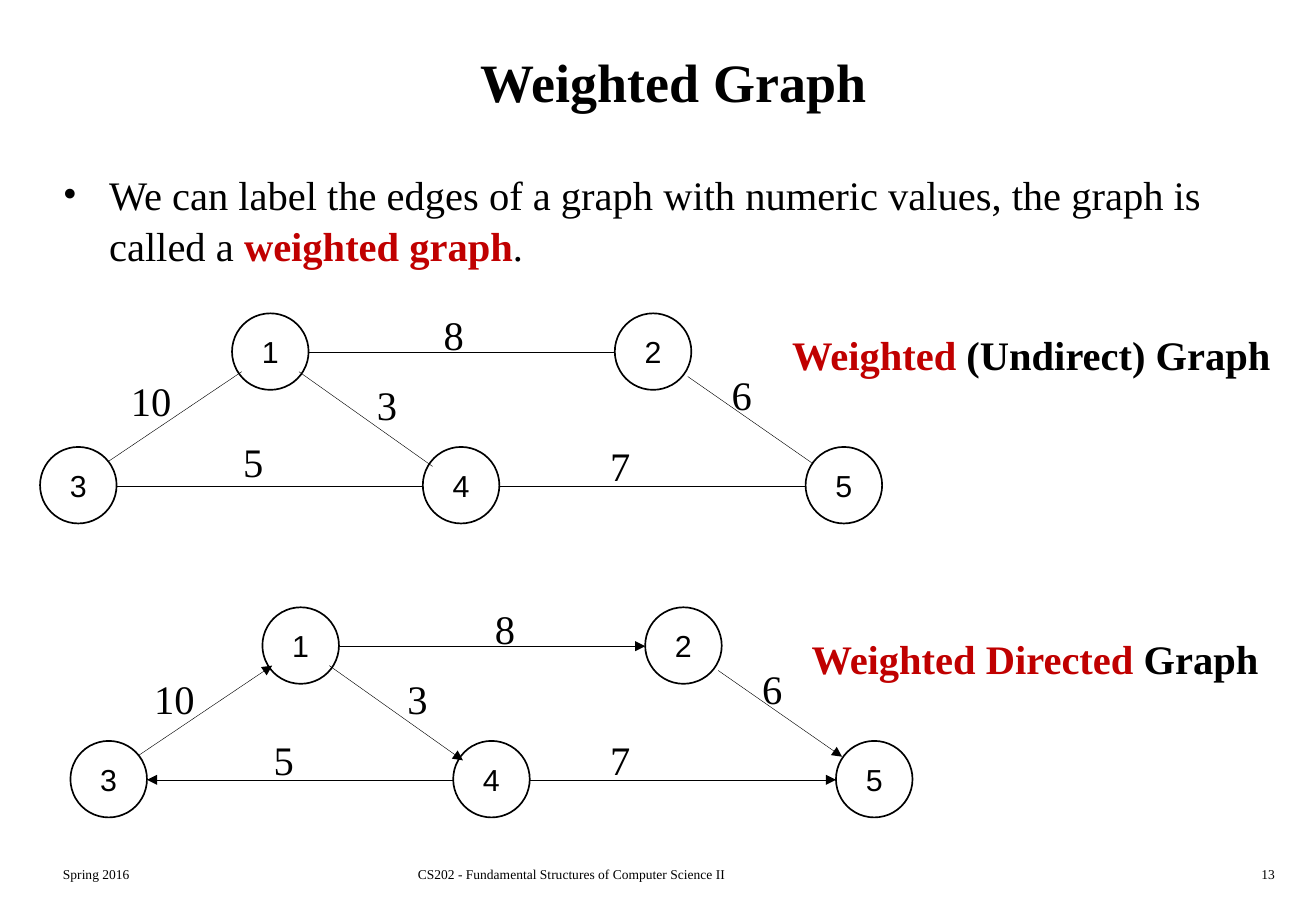
import lxml.etree
import pptx
import pptx.util
import pptx.dml.color
import pptx.enum.shapes
import pptx.enum.text
import pptx.oxml.ns

Inches = pptx.util.Inches
ALIGN = pptx.enum.text.PP_ALIGN
ANCHOR = pptx.enum.text.MSO_ANCHOR
BLACK = "000000"
RED = "C00000"
SERIF = "Times New Roman"
SIZE = 0.63
NODES = {"1": (1.58, 0), "4": (3.15, 1.1), "2": (4.73, 0),
         "5": (6.3, 1.1), "3": (0, 1.1)}
EDGES = [
    (2.13, 0.48, 3.23, 1.26),
    (2.21, 0.32, 4.73, 0.32),
    (5.33, 0.52, 6.35, 1.23),
    (3.15, 1.42, 0.63, 1.42),
    (3.78, 1.42, 6.3, 1.42),
    (0.56, 1.22, 1.66, 0.48),
]


def color(code):
    return pptx.dml.color.RGBColor.from_string(code)


def child(parent, tag, **attrs):
    lxml.etree.SubElement(parent, pptx.oxml.ns.qn(tag), attrs)


def write(frame, text, size=24, font=SERIF, bold=False, align=ALIGN.LEFT,
          anchor=ANCHOR.TOP, wrap=True):
    frame.word_wrap = wrap
    frame.vertical_anchor = anchor
    para = frame.paragraphs[0]
    para.alignment = align
    parts = [(text, BLACK, bold)] if isinstance(text, str) else text
    for words, tint, heavy in parts:
        run = para.add_run()
        run.text = words
        run.font.size = pptx.util.Pt(size)
        run.font.name = font
        run.font.bold = heavy
        run.font.color.rgb = color(tint)
    return para


def label(slide, text, left, top, width, height, **style):
    box = slide.shapes.add_textbox(
        Inches(left), Inches(top), Inches(width), Inches(height))
    return write(box.text_frame, text, **style)


def bullet(para):
    para.line_spacing = 1.05
    props = para._p.get_or_add_pPr()
    props.set("marL", str(Inches(0.38)))
    props.set("indent", str(-Inches(0.38)))
    child(props, "a:buFont", typeface=SERIF)
    child(props, "a:buChar", char="•")


def edge(group, ends, arrow):
    line = group.shapes.add_connector(
        pptx.enum.shapes.MSO_CONNECTOR.STRAIGHT, *map(Inches, ends))
    line.line.color.rgb = color(BLACK)
    line.line.width = pptx.util.Pt(0.25)
    props = line._element.spPr
    if arrow:
        child(props.find(pptx.oxml.ns.qn("a:ln")), "a:tailEnd", type="triangle")
    child(props, "a:effectLst")


def node(group, name, left, top):
    disc = group.shapes.add_shape(
        pptx.enum.shapes.MSO_SHAPE.OVAL,
        Inches(left), Inches(top), Inches(SIZE), Inches(SIZE))
    disc.shadow.inherit = False
    disc.fill.background()
    disc.line.color.rgb = color(BLACK)
    disc.line.width = pptx.util.Pt(1)
    write(disc.text_frame, name, size=18, font="Arial",
          align=ALIGN.CENTER, anchor=ANCHOR.MIDDLE, wrap=False)


def graph(slide, left, top, weights, arrow=False):
    group = slide.shapes.add_group_shape()
    for x1, y1, x2, y2 in EDGES:
        edge(group, (left + x1, top + y1, left + x2, top + y2), arrow)
    for name, (x, y) in NODES.items():
        node(group, name, left + x, top + y)
    for text, x, y in weights:
        width = 0.37 if len(text) == 1 else 0.53
        label(slide, text, x, y, width, 0.5, align=ALIGN.CENTER, wrap=False)


def main():
    deck = pptx.Presentation()
    deck.slide_width = Inches(10.83)
    deck.slide_height = Inches(7.5)
    slide = deck.slides.add_slide(deck.slide_layouts[6])

    label(slide, "Spring 2016", 0.42, 7.08, 2.26, 0.25, size=8)
    label(slide, "CS202 - Fundamental Structures of Computer Science II",
          3.34, 7.08, 4.06, 0.25, size=8)
    label(slide, "13", 8.33, 7.08, 2.26, 0.25, size=8, align=ALIGN.RIGHT)

    label(slide, "Weighted Graph", 0.42, 0.17, 10.25, 1, size=32, bold=True,
          align=ALIGN.CENTER, anchor=ANCHOR.MIDDLE)
    bullet(label(slide, [
        ("We can label the edges of a graph with numeric values, "
         "the graph is called a ", BLACK, False),
        ("weighted graph", RED, True),
        (".", BLACK, False),
    ], 0.42, 1.33, 10.17, 1.08))

    graph(slide, 0.33, 2.58, [
        ("8", 3.55, 2.5), ("7", 4.92, 3.58), ("10", 0.98, 3.05),
        ("5", 1.9, 3.55), ("3", 3, 3.08), ("6", 5.92, 3)])
    graph(slide, 0.58, 5, [
        ("10", 1.17, 5.5), ("5", 2.15, 6), ("8", 3.97, 4.92),
        ("7", 4.92, 6), ("3", 3.25, 5.5), ("6", 6.17, 5.42)], arrow=True)

    label(slide, [("Weighted", RED, True), (" (Undirect) Graph", BLACK, True)],
          6.42, 2.67, 4.18, 0.51, wrap=False)
    label(slide, [("Weighted Directed ", RED, True), ("Graph", BLACK, True)],
          6.58, 5.17, 3.91, 0.51, wrap=False)

    deck.save("out.pptx")


if __name__ == "__main__":
    main()
